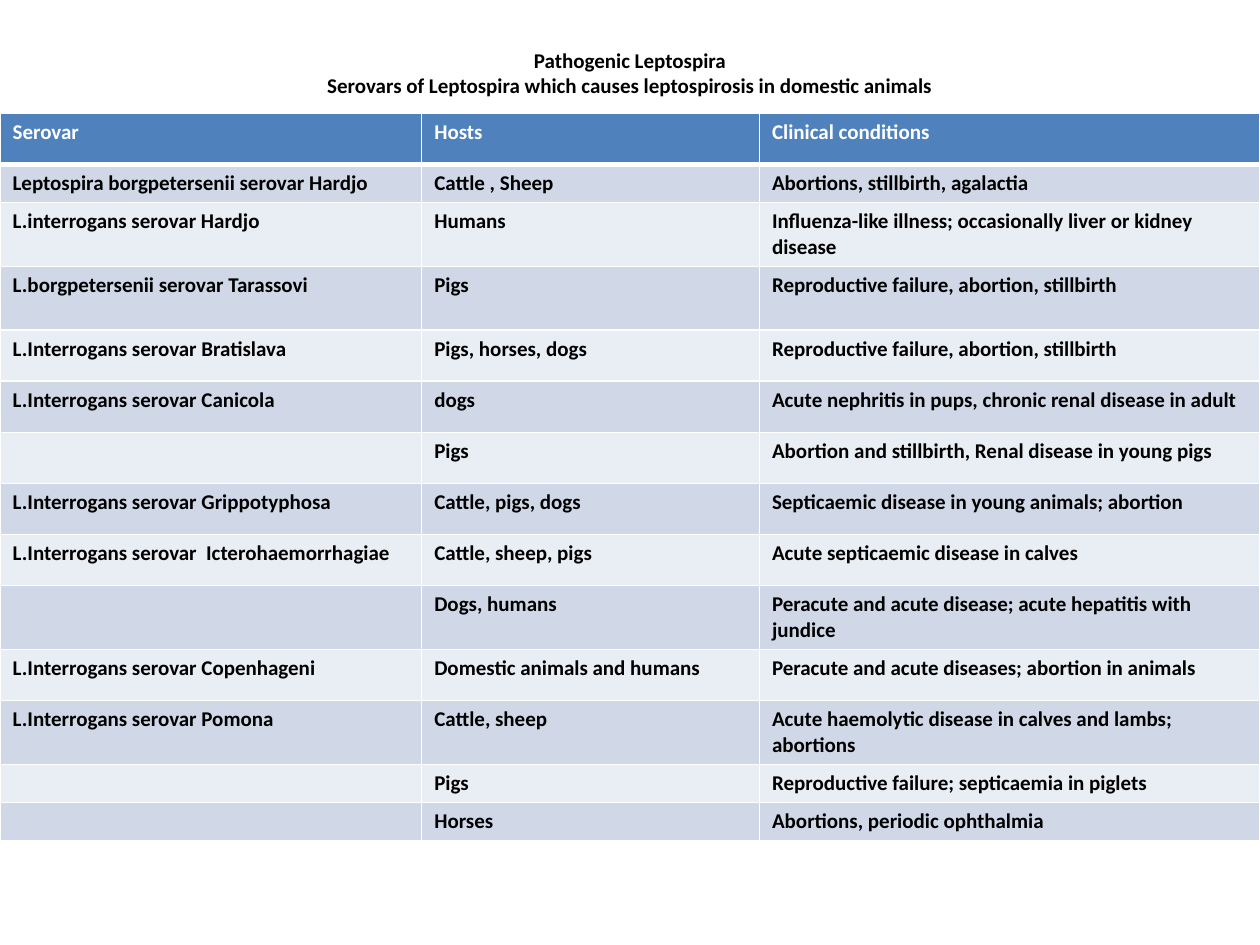
from dataclasses import dataclass

from lxml.etree import SubElement
from pptx import Presentation
from pptx.dml.color import RGBColor
from pptx.enum.text import MSO_ANCHOR as Anchor, PP_ALIGN as Align
from pptx.oxml.ns import qn
from pptx.util import Pt


@dataclass(frozen=True)
class Theme:
    font: str = "Calibri"
    size: int = 12
    text: str = "000000"
    light: str = "FFFFFF"
    header: str = "4F81BD"
    bands: tuple = ("D0D8E8", "E9EDF4")
    line: int = 1
    header_line: int = 3


THEME = Theme()
SHORT, MEDIUM, TALL = 21.7, 29.2, 36.5
COLUMNS = (241, 193, 286)
ROWS = [
    (MEDIUM, "Serovar", "Hosts", "Clinical conditions"),
    (SHORT, "Leptospira borgpetersenii serovar Hardjo", "Cattle , Sheep",
     "Abortions, stillbirth, agalactia"),
    (TALL, "L.interrogans serovar Hardjo", "Humans",
     "Influenza-like illness; occasionally liver or kidney disease"),
    (TALL, "L.borgpetersenii serovar Tarassovi", "Pigs",
     "Reproductive failure, abortion, stillbirth"),
    (MEDIUM, "L.Interrogans serovar Bratislava", "Pigs, horses, dogs",
     "Reproductive failure, abortion, stillbirth"),
    (MEDIUM, "L.Interrogans serovar Canicola", "dogs",
     "Acute nephritis in pups, chronic renal disease in adult"),
    (MEDIUM, "", "Pigs", "Abortion and stillbirth, Renal disease in young pigs"),
    (MEDIUM, "L.Interrogans serovar Grippotyphosa", "Cattle, pigs, dogs",
     "Septicaemic disease in young animals; abortion"),
    (MEDIUM, "L.Interrogans serovar  Icterohaemorrhagiae", "Cattle, sheep, pigs",
     "Acute septicaemic disease in calves"),
    (TALL, "", "Dogs, humans",
     "Peracute and acute disease; acute hepatitis with jundice"),
    (MEDIUM, "L.Interrogans serovar Copenhageni", "Domestic animals and humans",
     "Peracute and acute diseases; abortion in animals"),
    (TALL, "L.Interrogans serovar Pomona", "Cattle, sheep",
     "Acute haemolytic disease in calves and lambs; abortions"),
    (SHORT, "", "Pigs", "Reproductive failure; septicaemia in piglets"),
    (SHORT, "", "Horses", "Abortions, periodic ophthalmia"),
]


def write(frame, text, color=THEME.text, align=Align.LEFT, anchor=Anchor.TOP):
    frame.word_wrap = True
    frame.vertical_anchor = anchor
    para = frame.paragraphs[0]
    para.alignment = align
    if not text:
        para._p.get_or_add_endParaRPr().set("sz", str(THEME.size * 100))
        return
    for index, line in enumerate(text.split("\n")):
        if index:
            para.add_line_break()
        span = para.add_run()
        span.text = line
        span.font.name = THEME.font
        span.font.size = Pt(THEME.size)
        span.font.bold = True
        span.font.color.rgb = RGBColor.from_string(color)


def set_borders(cell, top, bottom):
    properties = cell._tc.get_or_add_tcPr()
    widths = {"L": THEME.line, "R": THEME.line, "T": top, "B": bottom}
    for side, width in widths.items():
        border = SubElement(properties, qn(f"a:ln{side}"), w=str(Pt(width)))
        fill = SubElement(border, qn("a:solidFill"))
        SubElement(fill, qn("a:srgbClr"), val=THEME.light)


def add_title(page, left, top, width, height):
    box = page.shapes.add_textbox(Pt(left), Pt(top), Pt(width), Pt(height))
    write(box.text_frame,
          "Pathogenic Leptospira\n"
          "Serovars of Leptospira which causes leptospirosis in domestic animals",
          align=Align.CENTER, anchor=Anchor.MIDDLE)


def add_serovar_table(page, left, top, width, height):
    table = page.shapes.add_table(len(ROWS), len(COLUMNS), Pt(left), Pt(top),
                                  Pt(width), Pt(height)).table
    table.horz_banding = False
    for column, share in zip(table.columns, COLUMNS):
        column.width = Pt(width * share / sum(COLUMNS))
    for index, (row_height, *texts) in enumerate(ROWS):
        row = table.rows[index]
        row.height = Pt(row_height)
        is_header = index == 0
        color = THEME.light if is_header else THEME.text
        shade = THEME.header if is_header else THEME.bands[(index - 1) % 2]
        above = THEME.header_line if index == 1 else THEME.line
        below = THEME.header_line if is_header else THEME.line
        for cell, text in zip(row.cells, texts):
            write(cell.text_frame, text, color=color)
            set_borders(cell, above, below)
            cell.fill.solid()
            cell.fill.fore_color.rgb = RGBColor.from_string(shade)


def main():
    deck = Presentation()
    deck.slide_width, deck.slide_height = Pt(720), Pt(540)
    page = deck.slides.add_slide(deck.slide_layouts[6])
    add_title(page, 36, 22, 648, 39)
    add_serovar_table(page, 0, 64.8, 720, sum(row[0] for row in ROWS))
    deck.save("out.pptx")


if __name__ == "__main__":
    main()
